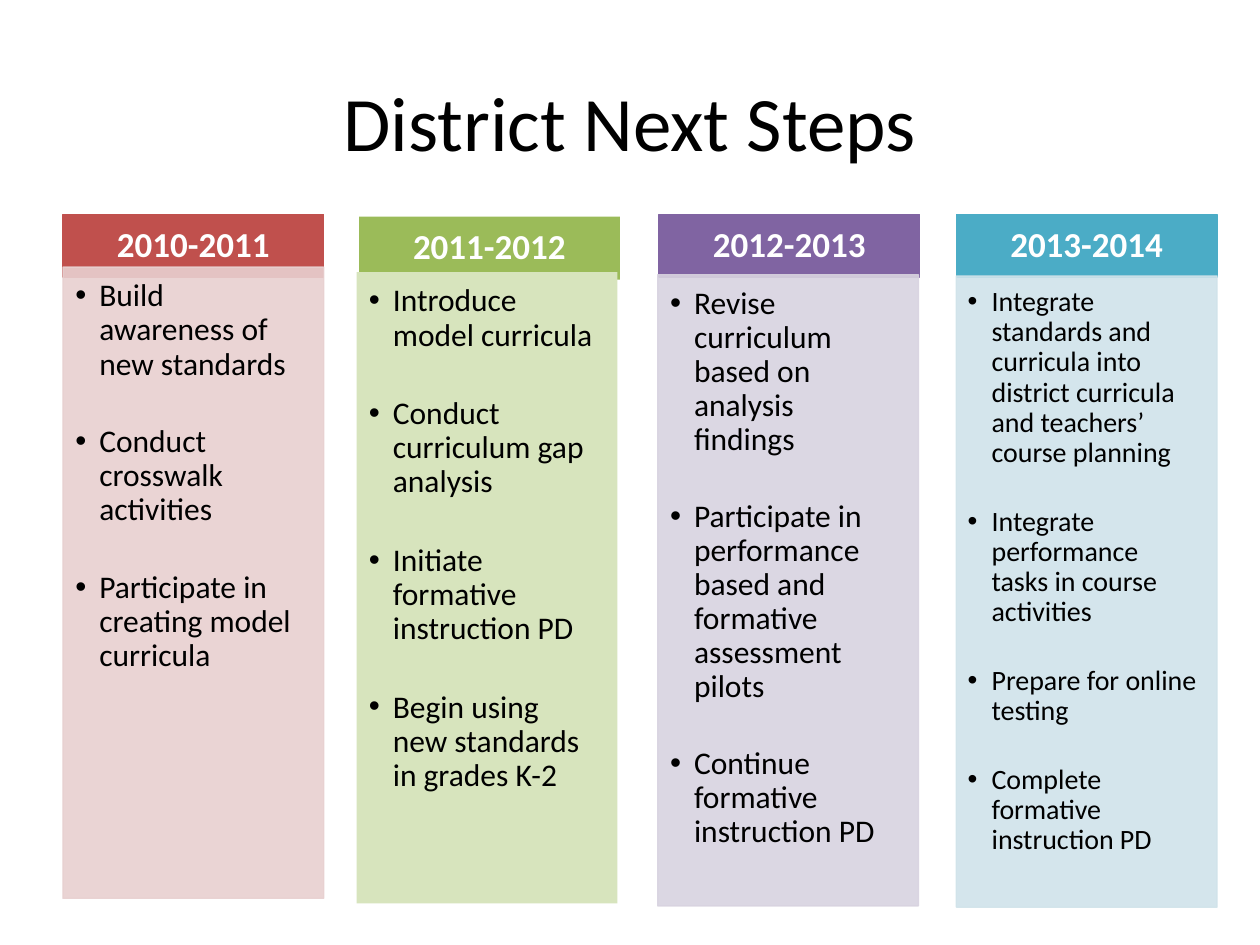
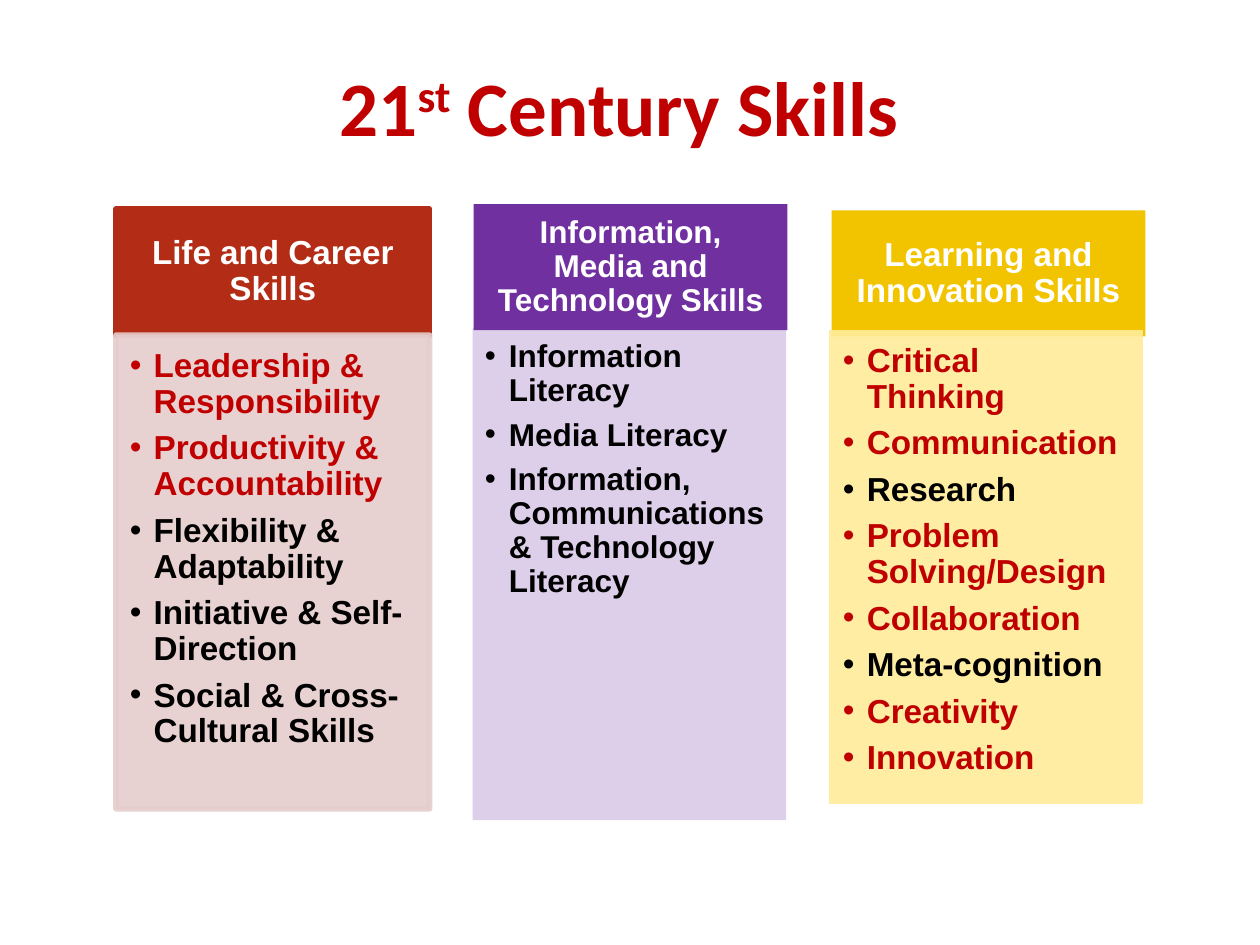
from dataclasses import dataclass

from lxml.etree import SubElement
from pptx import Presentation
from pptx.dml.color import RGBColor as RGB
from pptx.enum.shapes import MSO_SHAPE as SHAPE
from pptx.enum.text import MSO_ANCHOR as ANCHOR, MSO_AUTO_SIZE as AUTO, PP_ALIGN as ALIGN
from pptx.oxml.ns import qn
from pptx.util import Inches, Pt


@dataclass(frozen=True)
class Theme:
    black: str = "000000"
    white: str = "FFFFFF"
    accent: str = "C00000"
    title_font: str = "Calibri"
    title_size: int = 44
    line_spacing: float = 0.9
    indent: float = 0.19


@dataclass(frozen=True)
class Style:
    font: str
    width: float
    head_height: float
    head_insets: tuple
    line_width: float
    bold: bool


@dataclass(frozen=True)
class Column:
    heading: str
    head_at: tuple
    body_at: tuple
    body_height: float
    head_fill: str
    body_fill: str
    head_size: int
    body_size: int
    gap: float
    items: tuple
    alpha: int = 90
    outlined: bool = True
    accented: tuple = ()


THEME = Theme()
STEPS = Style("Calibri", 2.07, 0.5, (0.16, 0.09), 0.75, False)
SKILLS = Style("Arial", 2.49, 1, (0.15, 0.08), 3.15, True)

STEP_COLUMNS = (
    Column("2010-2011", (0.5, 1.7), (0.5, 2.12), 5.01, "C0504D", "E8D0D0", 20, 18, 25,
           ("Build awareness of new standards",
            "Conduct crosswalk activities",
            "Participate in creating model curricula")),
    Column("2011-2012", (2.85, 1.72), (2.83, 2.16), 5.01, "9BBB59", "D7E4BD", 20, 18, 25.5,
           ("Introduce model curricula",
            "Conduct curriculum gap analysis",
            "Initiate formative instruction PD",
            "Begin using new standards in grades K-2"),
           alpha=100, outlined=False),
    Column("2012-2013", (5.23, 1.7), (5.22, 2.18), 5.01, "8064A2", "D8D3E0", 20, 18, 24.5,
           ("Revise curriculum based on analysis findings",
            "Participate in performance based and formative assessment pilots",
            "Continue formative instruction PD")),
    Column("2013-2014", (7.59, 1.7), (7.59, 2.19), 5.01, "4BACC6", "D0E3EA", 20, 16, 22,
           ("Integrate standards and curricula into district curricula and teachers’ course planning",
            "Integrate performance tasks in course activities",
            "Prepare for online testing",
            "Complete formative instruction PD")),
)

SKILL_COLUMNS = (
    Column("Life and Career Skills", (0.92, 1.66), (0.92, 2.66), 3.76,
           "B32C16", "E5CDCC", 19, 19, 6,
           ("Leadership & Responsibility", "Productivity & Accountability",
            "Flexibility & Adaptability", "Initiative & Self-Direction",
            "Social & Cross-Cultural Skills"),
           accented=(0, 1)),
    Column("Information, Media and Technology Skills", (3.76, 1.62), (3.75, 2.6), 3.91,
           "7030A0", "7030A0", 18, 18, 6,
           ("Information Literacy", "Media Literacy",
            "Information, Communications & Technology Literacy"),
           alpha=23, outlined=False),
    Column("Learning and Innovation Skills", (6.6, 1.67), (6.58, 2.62), 3.76,
           "F2C400", "FFEC9B", 19, 19, 6,
           ("Critical Thinking", "Communication", "Research", "Problem Solving/Design",
            "Collaboration", "Meta-cognition", "Creativity", "Innovation"),
           outlined=False, accented=(0, 1, 3, 4, 6, 7)),
)


def style_run(r, font, size, color, bold):
    r.font.name = font
    r.font.size = Pt(size)
    r.font.bold = bold
    r.font.color.rgb = RGB.from_string(color)


def paint(fill, color, alpha):
    fill.solid()
    fill.fore_color.rgb = RGB.from_string(color)
    if alpha < 100:
        for clr in fill._xPr.iter(qn("a:srgbClr")):
            SubElement(clr, qn("a:alpha"), val=str(alpha * 1000))


def add_panel(slide, at, size, color, line_width, insets, anchor, alpha=100):
    sp = slide.shapes.add_shape(SHAPE.RECTANGLE, *map(Inches, at + size))
    sp.shadow.inherit = False
    paint(sp.fill, color, alpha)
    if line_width:
        sp.line.width = Pt(line_width)
        paint(sp.line.fill, color, alpha)
    else:
        sp.line.fill.background()
    tf = sp.text_frame
    tf.word_wrap = True
    tf.vertical_anchor = anchor
    tf.margin_left, tf.margin_top, tf.margin_right, tf.margin_bottom = map(Inches, insets)
    return tf


def add_bullet(p):
    p.level = 1
    pPr = p._p.get_or_add_pPr()
    pPr.set("marL", str(Inches(THEME.indent)))
    pPr.set("indent", str(-Inches(THEME.indent)))
    SubElement(pPr, qn("a:buFont"), typeface="Arial")
    SubElement(pPr, qn("a:buChar"), char="•")


def add_heading(slide, col, style):
    line_width = style.line_width if col.outlined else 0
    tf = add_panel(slide, col.head_at, (style.width, style.head_height), col.head_fill,
                   line_width, style.head_insets * 2, ANCHOR.MIDDLE)
    tf.text = col.heading
    p = tf.paragraphs[0]
    p.alignment = ALIGN.CENTER
    p.line_spacing = THEME.line_spacing
    style_run(p.runs[0], style.font, col.head_size, THEME.white, True)


def add_list(slide, col, style):
    line_width = style.line_width if col.outlined else 0
    near = round(col.body_size * 0.0057, 2)
    insets = (near, near, round(near * 1.4, 2), round(near * 1.6, 2))
    tf = add_panel(slide, col.body_at, (style.width, col.body_height), col.body_fill,
                   line_width, insets, ANCHOR.TOP, col.alpha)
    tf.text = "\n".join(col.items)
    for i, p in enumerate(tf.paragraphs):
        p.alignment = ALIGN.LEFT
        p.line_spacing = THEME.line_spacing
        p.space_after = Pt(col.gap)
        add_bullet(p)
        color = THEME.accent if i in col.accented else THEME.black
        style_run(p.runs[0], style.font, col.body_size, color, style.bold)


def add_title(slide, box, parts, color, bold):
    sp = slide.shapes.title
    sp.left, sp.top, sp.width, sp.height = map(Inches, box)
    tf = sp.text_frame
    tf.auto_size = AUTO.NONE
    tf.vertical_anchor = ANCHOR.MIDDLE
    p = tf.paragraphs[0]
    p.alignment = ALIGN.CENTER
    for text, raised in parts:
        r = p.add_run()
        r.text = text
        style_run(r, THEME.title_font, THEME.title_size, color, bold)
        if raised:
            r._r.get_or_add_rPr().set("baseline", "30000")


def add_column_slide(prs, title_box, title_parts, title_color, title_bold, columns, style):
    slide = prs.slides.add_slide(prs.slide_layouts.get_by_name("Title Only"))
    add_title(slide, title_box, title_parts, title_color, title_bold)
    for col in columns:
        add_heading(slide, col, style)
        add_list(slide, col, style)


def main():
    prs = Presentation()
    prs.slide_width, prs.slide_height = Inches(10), Inches(7.5)
    add_column_slide(prs, (0.75, 0.33, 8.5, 1.25), (("District Next Steps", False),),
                     THEME.black, False, STEP_COLUMNS, STEPS)
    add_column_slide(prs, (0.58, 0.42, 8.67, 0.83),
                     (("21", False), ("st", True), (" Century Skills", False)),
                     THEME.accent, True, SKILL_COLUMNS, SKILLS)
    prs.save("out.pptx")


if __name__ == "__main__":
    main()
